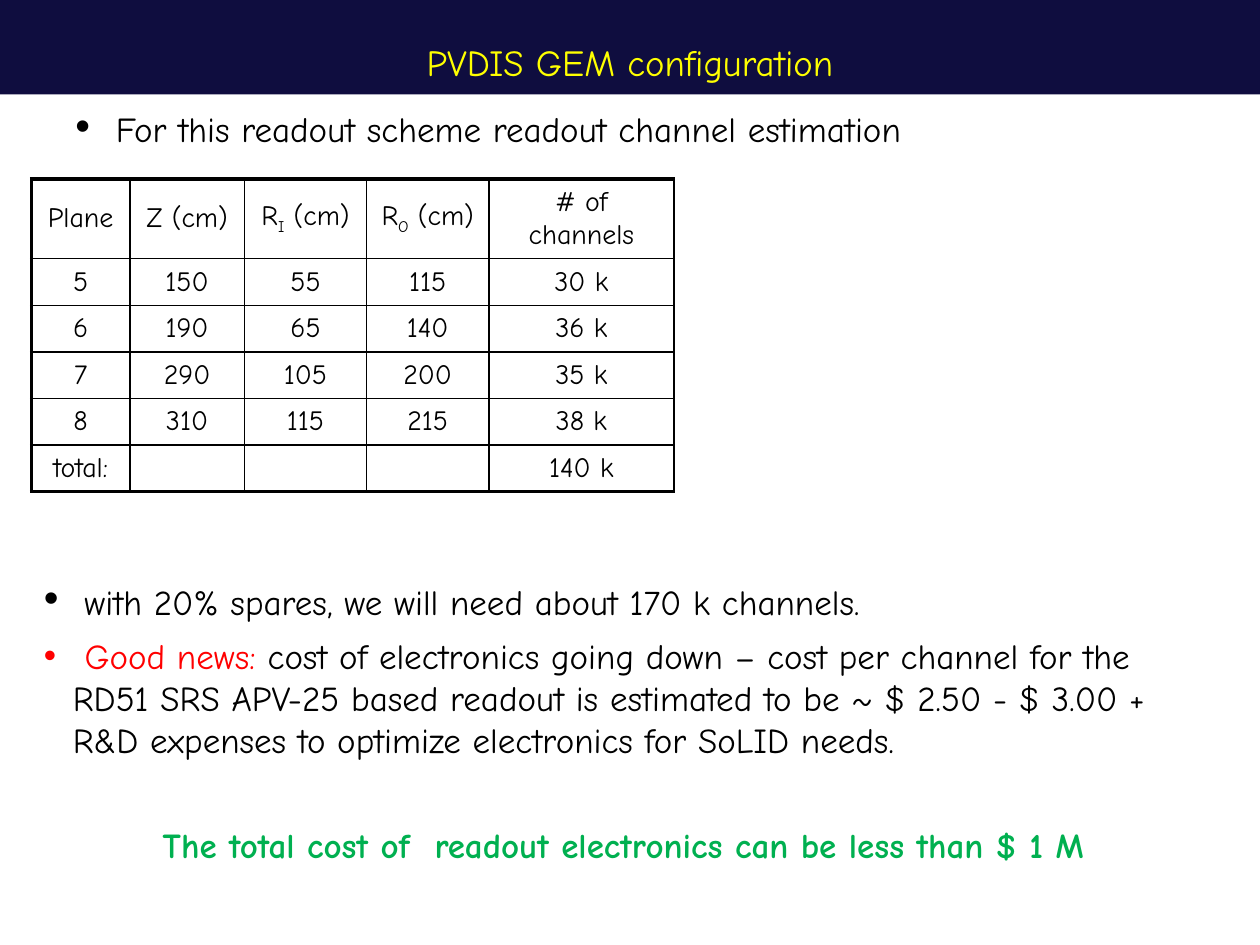
from lxml import etree
from pptx import Presentation
from pptx import util as u
from pptx.dml.color import RGBColor
from pptx.enum import shapes, text
from pptx.oxml.ns import qn

NAVY = RGBColor(0x0F, 0x0D, 0x3F)
YELLOW = RGBColor(0xFF, 0xFF, 0x00)
BLACK = RGBColor(0, 0, 0)
RED = RGBColor(0xFF, 0, 0)
GREEN = RGBColor(0, 0xB0, 0x50)
FONT = "Comic Neue"

# Content; a run is (text, colour), with None for a wide Arial space
TITLE = "PVDIS GEM configuration"
GAP = (" ", None)
INTRO = [GAP, ("For this readout scheme readout channel estimation", BLACK)]
SPARES = [GAP, ("with 20% spares, we will need about 170 k channels.", BLACK)]
COST = [
    (" Good news: ", RED),
    ("cost of electronics going down – cost per channel for the RD51 SRS "
     "APV-25 based readout is estimated to be ~ $ 2.50 - $ 3.00 + R&D "
     "expenses to optimize electronics for SoLID needs.", BLACK),
]
TOTAL = "The total cost of  readout electronics can be less than $ 1 M "

# A header with three parts has its middle part as a subscript
ROWS = [
    [("Plane",), ("Z (cm)",), ("R", "I", " (cm)"), ("R", "O", " (cm)"),
     ("# of channels",)],
    [("5",), ("150",), ("55",), ("115",), ("30 k",)],
    [("6",), ("190",), ("65",), ("140",), ("36 k",)],
    [("7",), ("290",), ("105",), ("200",), ("35 k",)],
    [("8",), ("310",), ("115",), ("215",), ("38 k",)],
    [("total:",), (), (), (), ("140 k",)],
]
COL_WIDTHS = [0.78, 0.91, 0.97, 0.97, 1.47]
HEADER_HEIGHT, ROW_HEIGHT = 0.63, 0.37
THIN, THICK = 1, 2.25

prs = Presentation()
prs.slide_width, prs.slide_height = u.Inches(10), u.Inches(7.5)
s = prs.slides.add_slide(prs.slide_layouts[6])


def inches(*values):
    return [u.Inches(v) for v in values]


def set_font(font, size, color, bold=False):
    font.name, font.size, font.bold = FONT, u.Pt(size), bold
    font.color.rgb = color


def add_text_box(*at):
    tf = s.shapes.add_textbox(*inches(*at)).text_frame
    tf.word_wrap = True
    return tf


def fill_bullet(p, runs):
    p.space_after = u.Pt(6)
    set_font(p.font, 20, BLACK)
    pPr = p._p.get_or_add_pPr()
    pPr.set("marL", str(u.Inches(0.23)))
    pPr.set("indent", str(-u.Inches(0.23)))
    bullet_font = etree.Element(qn("a:buFont"), typeface="Arial")
    bullet = etree.Element(qn("a:buChar"), char="•")
    default_font = pPr.find(qn("a:defRPr"))
    default_font.addprevious(bullet_font)
    default_font.addprevious(bullet)
    for words, color in runs:
        r = p.add_run()
        r.text = words
        set_font(r.font, 20, color or BLACK)
        if color is None:
            r.font.name, r.font.size = "Arial", u.Pt(24)


def set_borders(cell, **widths):
    tcPr = cell._tc.get_or_add_tcPr()
    for i, side in enumerate("LRTB"):
        ln = etree.Element(qn(f"a:ln{side}"), w=str(u.Pt(widths[side])))
        fill = etree.SubElement(ln, qn("a:solidFill"))
        etree.SubElement(fill, qn("a:srgbClr"), val=str(BLACK))
        tcPr.insert(i, ln)


# Introduction
fill_bullet(add_text_box(0.5, 0.75, 9.5, 0.51).paragraphs[0], INTRO)

# Title bar
bar = s.shapes.add_shape(shapes.MSO_SHAPE.RECTANGLE, *inches(0, 0, 10, 0.75))
bar.shadow.inherit = False
bar.fill.solid()
bar.fill.fore_color.rgb = NAVY
bar.line.fill.background()
tf = bar.text_frame
tf.vertical_anchor = text.MSO_ANCHOR.BOTTOM
tf.margin_bottom = u.Inches(0.09)
p = tf.paragraphs[0]
p.text, p.alignment, p.line_spacing = TITLE, text.PP_ALIGN.CENTER, 0.8
set_font(p.font, 21, YELLOW)

# Conclusions
tf = add_text_box(0.25, 4.5, 9.5, 2.44)
fill_bullet(tf.paragraphs[0], SPARES)
fill_bullet(tf.add_paragraph(), COST)
p = tf.add_paragraph()
p.text, p.alignment = TOTAL, text.PP_ALIGN.CENTER
p.space_before, p.space_after = u.Pt(30), u.Pt(6)
set_font(p.font, 20, GREEN, bold=True)

# Channel table
height = HEADER_HEIGHT + ROW_HEIGHT * (len(ROWS) - 1)
table = s.shapes.add_table(len(ROWS), len(COL_WIDTHS), *inches(
    0.25, 1.42, sum(COL_WIDTHS), height)).table
table.first_row = table.horz_banding = False
for column, width in zip(table.columns, COL_WIDTHS):
    column.width = u.Inches(width)
for i, parts_row in enumerate(ROWS):
    table.rows[i].height = u.Inches(ROW_HEIGHT if i else HEADER_HEIGHT)
    for j, parts in enumerate(parts_row):
        cell = table.cell(i, j)
        cell.fill.background()
        cell.vertical_anchor = text.MSO_ANCHOR.MIDDLE
        set_borders(cell, L=THIN if j else THICK, R=THIN,
                    T=THIN if i else THICK,
                    B=THICK if i == len(ROWS) - 1 else THIN)
        p = cell.text_frame.paragraphs[0]
        p.alignment = text.PP_ALIGN.CENTER
        set_font(p.font, 16, BLACK)
        for k, part in enumerate(parts):
            r = p.add_run()
            r.text = part
            if k == 1:
                r.font._element.set("baseline", "-25000")

prs.save("out.pptx")
